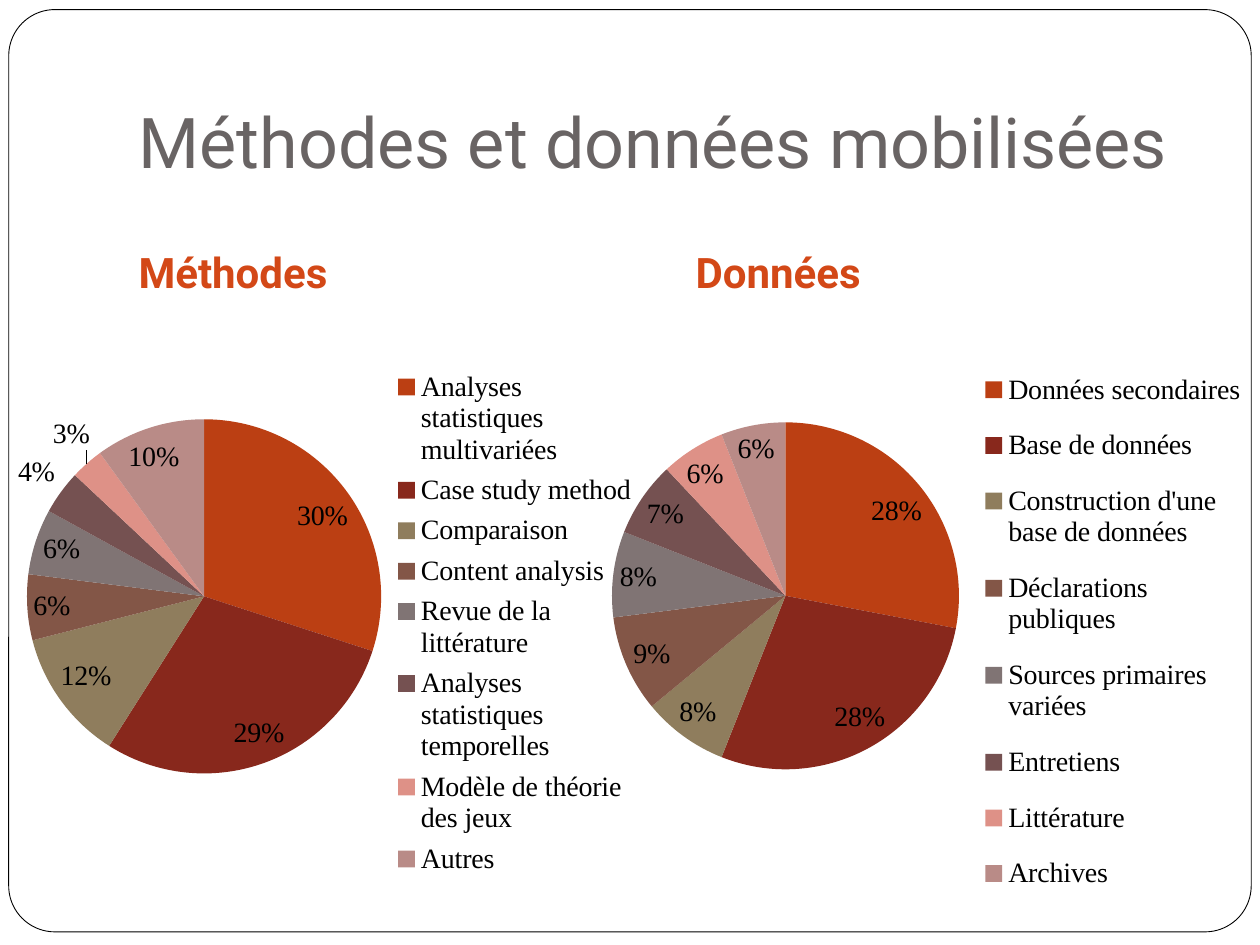
from pptx import Presentation
from pptx.chart.data import CategoryChartData as ChartData
from pptx.dml.color import RGBColor as RGB
from pptx.enum.chart import XL_CHART_TYPE as Kind
from pptx.enum.chart import XL_LABEL_POSITION as Spot
from pptx.enum.chart import XL_LEGEND_POSITION as Side
from pptx.enum.shapes import MSO_SHAPE as Form
from pptx.enum.text import MSO_ANCHOR as Anchor, MSO_AUTO_SIZE as Fit, PP_ALIGN as Align
from pptx.oxml import parse_xml
from pptx.oxml.ns import nsdecls
from pptx.util import Pt

COLORS = {"white": "FFFFFF", "black": "000000", "title": "696464", "head": "D34817"}
SLICES = ["BB3F13", "88281C", "8F7D5D", "835647",
          "807474", "755151", "DE9187", "B98B87"]
TITLE = "Méthodes et données mobilisées"

# Boxes are left, top, width, height in points on the slide.
PIES = [
    {"head": "Méthodes", "left": 72,
     "box": (-20.16, 139.68, 397.44, 383.04),
     "disc": (15.4, 239.6, 202.4, 202.4),
     "key": (225, 207, 138, 298),
     "data": [("Analyses statistiques multivariées", 30), ("Case study method", 29),
              ("Comparaison", 12), ("Content analysis", 6),
              ("Revue de la littérature", 6), ("Analyses statistiques temporelles", 4),
              ("Modèle de théorie des jeux", 3), ("Autres", 10)]},
    {"head": "Données", "left": 390.24,
     "box": (314.64, 131.76, 405.36, 408.24),
     "disc": (349.7, 241.4, 198.3, 198.3),
     "key": (560.5, 200, 151, 322),
     "data": [("Données secondaires", 28), ("Base de données", 28),
              ("Construction d'une base de données", 8), ("Déclarations publiques", 9),
              ("Sources primaires variées", 8), ("Entretiens", 7),
              ("Littérature", 6), ("Archives", 6)]},
]


def paint(fill, color):
    fill.solid()
    fill.fore_color.rgb = RGB.from_string(color)


def style(font, size, color, name, bold=False):
    font.size, font.name, font.bold = Pt(size), name, bold
    font.color.rgb = RGB.from_string(color)


def write(holder, text, box, size, color, bold=False):
    holder.left, holder.top, holder.width, holder.height = map(Pt, box)
    frame = holder.text_frame
    frame.text = text
    frame.vertical_anchor = Anchor.BOTTOM
    frame.auto_size = Fit.NONE
    line = frame.paragraphs[0]
    line.alignment = Align.LEFT
    style(line.font, size, color, "Roboto", bold)
    return frame


def layout(part, box, area, inner=False):
    """Pin a chart part to an area of the slide, as fractions of the chart box."""
    spots = [(area[i] - box[i]) / box[i + 2] for i in (0, 1)]
    sizes = [area[i] / box[i] for i in (2, 3)]
    target = '<c:layoutTarget val="inner"/>' if inner else ""
    modes = '<c:xMode val="edge"/><c:yMode val="edge"/>'
    parts = "".join(f'<c:{tag} val="{val:.4f}"/>'
                    for tag, val in zip("xywh", spots + sizes))
    new = parse_xml(f'<c:layout {nsdecls("c")}><c:manualLayout>{target}{modes}{parts}'
                    '</c:manualLayout></c:layout>')
    for old in part.findall(new.tag):
        part.remove(old)
    part.insert(0 if inner else 1, new)


def draw_pie(slide, pie):
    data = ChartData()
    data.categories = [name for name, _ in pie["data"]]
    data.add_series("Series 1", [val for _, val in pie["data"]])
    box = pie["box"]
    chart = slide.shapes.add_chart(Kind.PIE, *map(Pt, box), data).chart
    chart.has_title = False
    style(chart.font, 16, COLORS["black"], "Times New Roman")
    chart.has_legend = True
    chart.legend.position = Side.RIGHT
    chart.legend.include_in_layout = False
    plot = chart.plots[0]
    plot.vary_by_categories = True
    for i, color in enumerate(SLICES):
        paint(plot.series[0].points[i].format.fill, color)
    plot.has_data_labels = True
    labels = plot.data_labels
    labels.show_percentage, labels.show_value = True, False
    labels.number_format, labels.number_format_is_linked = "0%", False
    labels.position = Spot.BEST_FIT
    style(labels.font, 16, COLORS["black"], "Times New Roman")
    area = chart.element.find(".//" + "{*}plotArea")
    layout(area, box, pie["disc"], inner=True)
    layout(chart.element.find(".//" + "{*}legend"), box, pie["key"])


def main():
    deck = Presentation()
    deck.slide_width, deck.slide_height = Pt(720), Pt(540)
    slide = deck.slides.add_slide(deck.slide_layouts[4])
    title, left, spare, right, extra = slide.placeholders
    for holder in (spare, extra):
        holder.element.getparent().remove(holder.element)

    frame = slide.shapes.add_shape(Form.ROUNDED_RECTANGLE, *map(Pt, (5, 5.5, 710, 527)))
    frame.adjustments[0] = 0.05
    frame.shadow.inherit = False
    paint(frame.fill, COLORS["white"])
    paint(frame.line.fill, COLORS["black"])
    frame.line.width = Pt(0.5)
    slide.shapes.element.insert(2, frame.element)  # behind the text

    text = write(title, TITLE, (72, 21.6, 612, 90), 40, COLORS["title"])
    text.margin_bottom = Pt(7.2)
    for holder, pie in zip((left, right), PIES):
        text = write(holder, pie["head"], (pie["left"], 113.76, 293.76, 59.76),
                     24, COLORS["head"], bold=True)
        text.paragraphs[0].space_before = Pt(5.8)
        draw_pie(slide, pie)
    deck.save("out.pptx")


if __name__ == "__main__":
    main()
